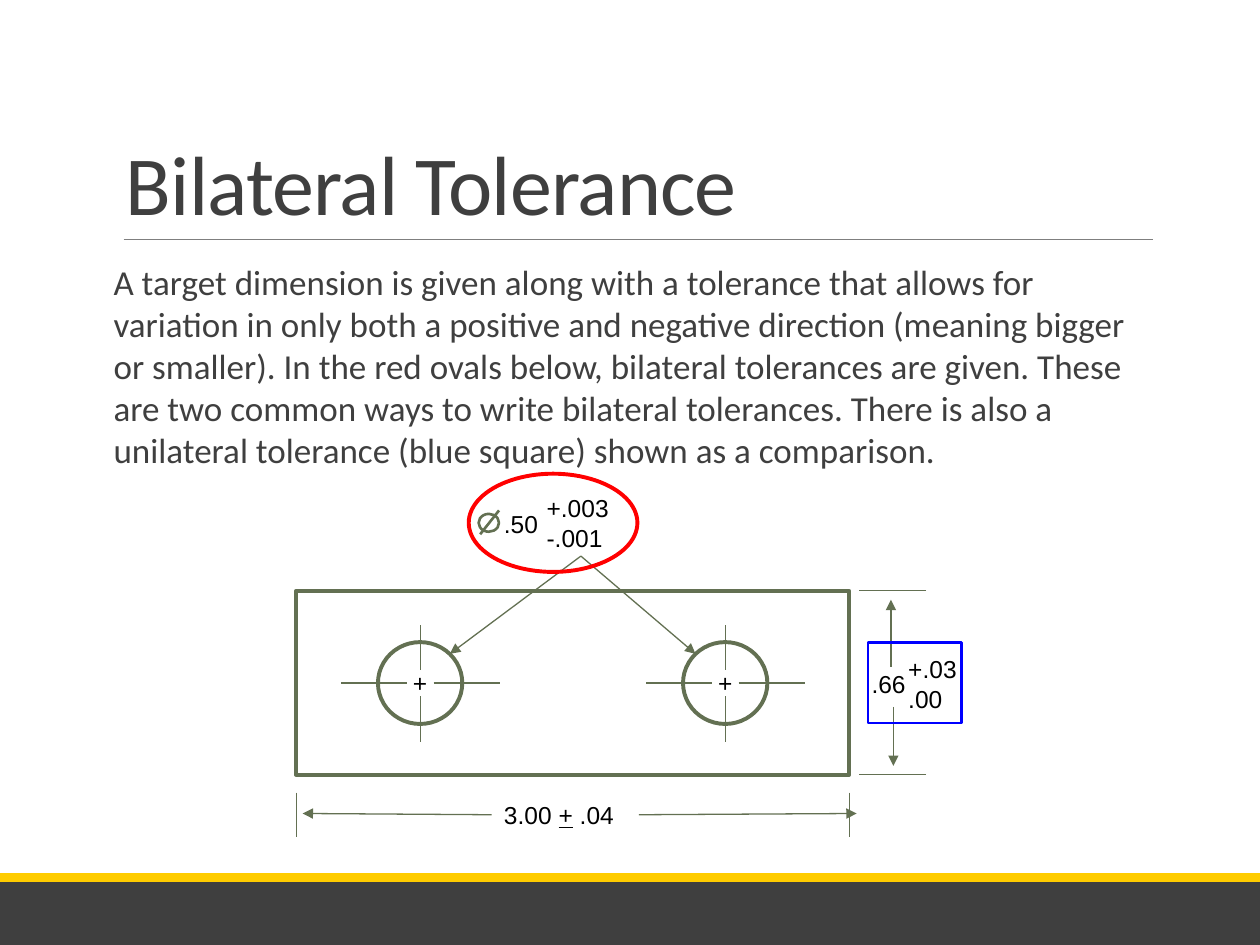
from dataclasses import dataclass
from typing import Optional

import lxml.etree
import pptx
import pptx.dml.color
import pptx.enum.shapes
import pptx.enum.text
import pptx.oxml.ns
import pptx.util

Cm = pptx.util.Cm
Pt = pptx.util.Pt
Shape = pptx.enum.shapes.MSO_SHAPE
Anchor = pptx.enum.text.MSO_ANCHOR
Align = pptx.enum.text.PP_ALIGN

OLIVE = "637052"
CHARCOAL = "3F3F3F"
TOP, LEFT, BOTTOM, RIGHT = range(4)

deck = pptx.Presentation()
deck.slide_width, deck.slide_height = Cm(25.4), Cm(19.05)
page = deck.slides.add_slide(deck.slide_layouts[6])


@dataclass
class Block:
    left: float
    top: float
    width: float
    height: float
    kind: Shape = Shape.RECTANGLE
    fill: Optional[str] = None
    line: Optional[str] = None
    weight: float = 2.25


@dataclass
class Stroke:
    start: tuple[float, float]
    end: tuple[float, float]
    color: str = OLIVE
    weight: float = 0.75
    arrow: bool = False


@dataclass
class Label:
    text: str
    left: float
    top: float
    width: float
    height: float


def rgb(value: str):
    return pptx.dml.color.RGBColor.from_string(value)


def draw_block(block: Block):
    shape = page.shapes.add_shape(
        block.kind, Cm(block.left), Cm(block.top), Cm(block.width), Cm(block.height))
    shape.shadow.inherit = False
    if block.fill:
        shape.fill.solid()
        shape.fill.fore_color.rgb = rgb(block.fill)
    else:
        shape.fill.background()
    if block.line:
        shape.line.color.rgb = rgb(block.line)
        shape.line.width = Pt(block.weight)
    else:
        shape.line.fill.background()
    return shape


def draw_stroke(stroke: Stroke):
    line = page.shapes.add_connector(
        pptx.enum.shapes.MSO_CONNECTOR.STRAIGHT,
        *(Cm(value) for value in stroke.start + stroke.end))
    line.line.color.rgb = rgb(stroke.color)
    line.line.width = Pt(stroke.weight)
    if stroke.arrow:
        outline = line.line._get_or_add_ln()
        lxml.etree.SubElement(outline, pptx.oxml.ns.qn("a:tailEnd"), type="triangle")
    lxml.etree.SubElement(line._element.spPr, pptx.oxml.ns.qn("a:effectLst"))
    return line


def write(box, text: str, *, size: float = 14, font: str = "Arial", color: str = "000000",
          anchor=Anchor.MIDDLE, align=Align.LEFT, inset: tuple[float, float] = (0.25, 0.25),
          line_spacing=None, tracking: int = 0, underlined: str = "") -> None:
    frame = box.text_frame
    frame.word_wrap = True
    frame.vertical_anchor = anchor
    frame.margin_left = frame.margin_right = Cm(inset[0])
    frame.margin_top = frame.margin_bottom = Cm(inset[1])
    for index, row in enumerate(text.split("\n")):
        para = frame.add_paragraph() if index else frame.paragraphs[0]
        para.alignment = align
        para.line_spacing = line_spacing
        for piece in row.partition(underlined) if underlined else (row,):
            span = para.add_run()
            span.text = piece
            span.font.size = Pt(size)
            span.font.name = font
            span.font.color.rgb = rgb(color)
            if underlined and piece == underlined:
                span.font.underline = True
            if tracking:
                span._r.get_or_add_rPr().set("spc", str(tracking))


def draw_label(label: Label, **style):
    box = page.shapes.add_textbox(
        Cm(label.left), Cm(label.top), Cm(label.width), Cm(label.height))
    write(box, label.text, **style)
    return box


def draw_hole(x: float, y: float) -> None:
    width, height = 1.7, 1.65
    circle = draw_block(
        Block(x - width / 2, y - height / 2, width, height, Shape.OVAL, line=OLIVE))
    write(circle, "+", align=Align.CENTER)
    for dx, dy, reach in ((0, -1, 1.18), (0, 1, 1.18), (1, 0, 1.6), (-1, 0, 1.6)):
        inner = 0.27
        draw_stroke(Stroke((x + dx * inner, y + dy * inner), (x + dx * reach, y + dy * reach)))


def main() -> None:
    draw_block(Block(0, 17.78, 25.4, 1.27, fill=CHARCOAL))
    draw_block(Block(0, 17.6, 25.4, 0.18, fill="FFCC00"))
    draw_stroke(Stroke((2.49, 4.83), (23.24, 4.83), color="7F7F7F"))

    draw_label(Label("Bilateral Tolerance", 2.29, 0.79, 20.96, 4.04),
               size=48, font="Calibri", color=CHARCOAL, anchor=Anchor.BOTTOM,
               inset=(0.25, 0.13), line_spacing=0.85, tracking=-50)
    draw_label(Label(
        "A target dimension is given along with a tolerance that allows for variation in "
        "only both a positive and negative direction (meaning bigger or smaller). In the "
        "red ovals below, bilateral tolerances are given. These are two common ways to "
        "write bilateral tolerances. There is also a unilateral tolerance (blue square) "
        "shown as a comparison.", 2.29, 5.13, 20.96, 4.6),
        size=20, font="Calibri", color=CHARCOAL, anchor=Anchor.TOP,
        inset=(0, 0.13), line_spacing=Pt(24))

    plate = Block(5.97, 11.91, 11.15, 3.71, line=OLIVE)
    draw_block(plate)
    for x in (plate.left, plate.left + plate.width):
        draw_stroke(Stroke((x, 15.98), (x, 16.87)))
    for y in (plate.top, plate.top + plate.height):
        draw_stroke(Stroke((18.67, y), (17.32, y)))

    hole_y = 13.77
    hole_centers = (8.47, 14.62)
    for x in hole_centers:
        draw_hole(x, hole_y)

    draw_label(Label(".66", 17.32, 13.56, 1.22, 0.46))
    draw_label(Label("+.03\n.00", 18.06, 13.11, 1.6, 1.35))
    draw_label(Label(".50", 9.91, 10.21, 1.22, 0.69))
    hole_tolerance = draw_label(Label("+.003\n-.001", 10.77, 9.86, 1.88, 1.35))
    length = draw_label(Label("3.00 + .04", 9.91, 16.08, 2.97, 0.69), underlined="+")

    draw_block(Block(9.65, 10.36, 0.41, 0.36, Shape.OVAL, line=OLIVE, weight=1.5))
    draw_stroke(Stroke((9.68, 10.77), (10.06, 10.29), weight=1.5))

    for x, side in zip(hole_centers, (1, -1)):
        leader = draw_stroke(Stroke((11.71, 11.21), (x + side * 0.6, 13.18), arrow=True))
        leader.begin_connect(hole_tolerance, BOTTOM)
    for site, start, end in ((LEFT, 9.91, 6.1), (RIGHT, 12.88, 17.27)):
        arrow = draw_stroke(Stroke((start, 16.42), (end, 16.4), arrow=True))
        arrow.begin_connect(length, site)
    draw_stroke(Stroke((17.96, 13.44), (17.96, 12.09), arrow=True))
    draw_stroke(Stroke((18.01, 14.25), (18.01, 15.44), arrow=True))

    draw_block(Block(17.5, 12.95, 1.88, 1.63, line="0000FF", weight=1.5))
    draw_block(Block(9.45, 9.55, 3.4, 1.98, Shape.OVAL, line="FF0000"))
    deck.save("out.pptx")


if __name__ == "__main__":
    main()
